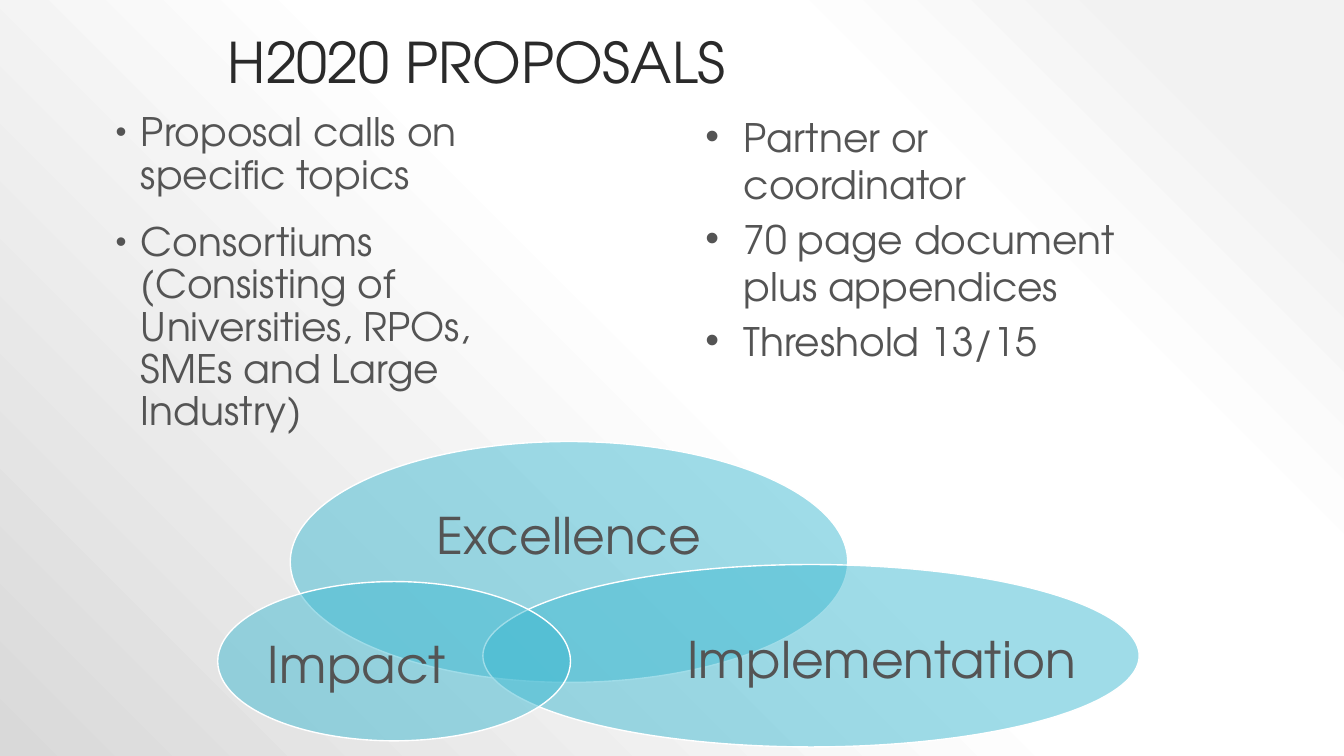
from lxml.etree import SubElement
from pptx import Presentation
from pptx.dml.color import RGBColor
from pptx.enum.shapes import MSO_SHAPE
from pptx.enum.text import MSO_ANCHOR, PP_ALIGN
from pptx.oxml import parse_xml
from pptx.oxml.ns import nsdecls, qn
from pptx.util import Inches, Pt

W, H = Inches(13.33), Inches(7.5)
FONT = "TeX Gyre Adventor"
COLORS = {"title": "2A2A2A", "text": "545454", "oval": "40BAD2", "outline": "FFFFFF"}
BACKDROP = {10: "F2F2F2", 28: "FFFFFF", 48: "FFFFFF", 100: "D9D9D9"}

TOPICS = ["Proposal calls on specific topics",
          "Consortiums (Consisting of Universities, RPOs, SMEs and Large Industry)"]
TERMS = ["Partner or coordinator", "70 page document plus appendices", "Threshold 13/15"]
CRITERIA = [
    ("Excellence", (21.6, 58.4, 41.48, 31.87), (27.15, 64, 30.38, 14.4)),
    ("Implementation", (35.93, 74.67, 48.83, 24.13), (50.93, 80.93, 29.33, 13.33)),
    ("Impact", (16.2, 76.93, 26.25, 21.07), (18.68, 82.4, 15.75, 11.6)),
]


def color(name):
    """Return the palette colour with this name."""
    return RGBColor.from_string(COLORS[name])


def apply(obj, formats):
    """Set each attribute of obj from a dict of format values."""
    for name, value in formats.items():
        setattr(obj, name, value)


def share(x, y, w, h):
    """Turn percentages of the slide's size into left, top, width and height."""
    return [int(size * pct / 100) for size, pct in zip((W, H, W, H), (x, y, w, h))]


def write(p, text, size, name="text", **formats):
    """Fill a paragraph with one formatted run."""
    apply(p, formats)
    r = p.add_run()
    r.text = text
    apply(r.font, {"name": FONT, "size": Pt(size), "bold": False})
    r.font.color.rgb = color(name)


def add_backdrop(s):
    """Give the slide a radial gradient centred on its top right corner."""
    stops = "".join(f'<a:gs pos="{pos * 1000}"><a:srgbClr val="{rgb}"/></a:gs>'
                    for pos, rgb in BACKDROP.items())
    s._element.cSld.insert(0, parse_xml(
        f'<p:bg {nsdecls("p", "a")}><p:bgPr><a:gradFill rotWithShape="1">'
        f'<a:gsLst>{stops}</a:gsLst><a:path path="circle">'
        '<a:fillToRect l="100000" b="100000"/></a:path></a:gradFill>'
        '<a:effectLst/></p:bgPr></p:bg>'))


def add_title(s, text, box):
    """Place and fill the title placeholder."""
    sp = s.shapes.title
    apply(sp, dict(zip(("left", "top", "width", "height"), share(*box))))
    tf = sp.text_frame
    apply(tf, {"vertical_anchor": MSO_ANCHOR.BOTTOM, "word_wrap": True})
    write(tf.paragraphs[0], text, 40, "title", alignment=PP_ALIGN.LEFT, line_spacing=0.9)


def add_bullets(s, items, box, indent, hang, gap, spacing, mark):
    """Add a column of bulleted paragraphs; mark is the bullet size in percent."""
    tf = s.shapes.add_textbox(*share(*box)).text_frame
    tf.word_wrap = True
    for i, item in enumerate(items):
        p = tf.add_paragraph() if i else tf.paragraphs[0]
        apply(p, {"line_spacing": spacing, "space_before": Pt(gap if i else 0)})
        pPr = p._p.get_or_add_pPr()
        pPr.set("marL", str(Inches(indent)))
        pPr.set("indent", str(-Inches(hang)))
        SubElement(SubElement(pPr, qn("a:buClr")), qn("a:srgbClr")).set("val", COLORS["text"])
        SubElement(pPr, qn("a:buSzPct")).set("val", str(mark * 1000))
        SubElement(pPr, qn("a:buFont")).set("typeface", "Arial")
        SubElement(pPr, qn("a:buChar")).set("char", "•")
        write(p, item, 28)


def add_oval(s, box):
    """Add a half transparent ellipse of the Venn diagram."""
    sp = s.shapes.add_shape(MSO_SHAPE.OVAL, *share(*box))
    sp.shadow.inherit = False
    sp.fill.solid()
    sp.fill.fore_color.rgb = color("oval")
    SubElement(sp.fill._xPr.find(".//" + qn("a:srgbClr")), qn("a:alpha")).set("val", "50000")
    sp.line.color.rgb = color("outline")
    sp.line.width = Pt(1)


def add_label(s, text, box):
    """Add a centred label without margins."""
    tf = s.shapes.add_textbox(*share(*box)).text_frame
    apply(tf, {"word_wrap": True, "vertical_anchor": MSO_ANCHOR.MIDDLE, "margin_left": 0,
               "margin_right": 0, "margin_top": 0, "margin_bottom": 0})
    write(tf.paragraphs[0], text, 36, alignment=PP_ALIGN.CENTER, line_spacing=0.9)


def main():
    """Build the slide and save it."""
    prs = Presentation()
    apply(prs, {"slide_width": W, "slide_height": H})
    s = prs.slides.add_slide(prs.slide_layouts[5])
    add_backdrop(s)
    add_title(s, "H2020 PROPOSALS", (16.2, 1.73, 67.5, 11.6))
    add_bullets(s, TOPICS, (7.5, 14.27, 33.15, 57.6), 0.3, 0.25, 18, 0.9, 80)
    for text, oval, label in CRITERIA:
        add_oval(s, oval)
        add_label(s, text, label)
    add_bullets(s, TERMS, (51.75, 14.27, 33.15, 57.6), 0.38, 0.38, 5.6, 1.0, 100)
    prs.save("out.pptx")


if __name__ == "__main__":
    main()
